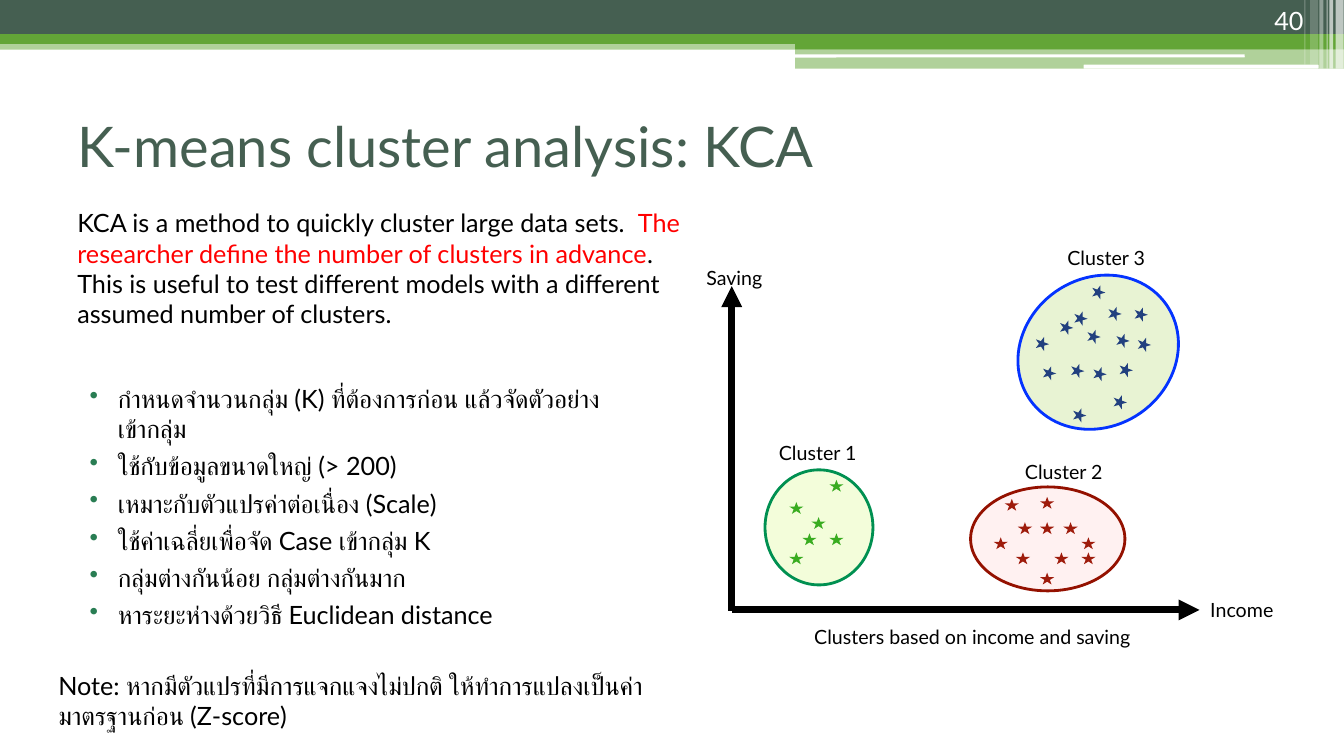
from lxml.etree import SubElement as Sub
from pptx import Presentation
from pptx.dml.color import RGBColor
from pptx.enum.shapes import MSO_CONNECTOR as Link, MSO_SHAPE as Form
from pptx.enum.text import MSO_ANCHOR as Anchor, PP_ALIGN as Align
from pptx.oxml.ns import qn
from pptx.util import Cm, Pt

FONT = "Lato"
WIDE = 33.87
HUES = {
    "black": "000000", "white": "FFFFFF", "red": "FF0000",
    "dark": "455F51", "leaf": "63A537", "bullet": "297D53",
}

# left, top, width, height, colour, opacity in percent
BARS = [
    (0, 1.02, WIDE, 0.23, "leaf", 50),
    (0, 0, WIDE, 0.86, "dark", 100),
    (0, 0.86, WIDE, 0.25, "leaf", 100),
    (20.04, 0.99, 13.83, 0.25, "leaf", 100),
    (20.04, 1.22, 13.83, 0.51, "leaf", 50),
]
GAPS = [(20.02, 1.37, 11.35, 0.08), (27.31, 1.63, 5.92, 0.1)]
# left, width, height, opacity
STRIPES = [
    (33.66, 0.2, 1.73, 65), (33.5, 0.1, 1.73, 65), (33.43, 0.03, 1.73, 60),
    (33.25, 0.1, 1.73, 40), (33.02, 0.2, 1.63, 20), (32.87, 0.03, 1.63, 30),
]

INTRO = [
    ("KCA is a method to quickly cluster large data sets.  ", "black"),
    ("The researcher define the number of clusters in advance", "red"),
    (".  This is useful to test different models with a different "
     "assumed number of clusters.", "black"),
]
POINTS = [
    "กำหนดจำนวนกลุ่ม (K) ที่ต้องการก่อน แล้วจัดตัวอย่างเข้ากลุ่ม",
    "ใช้กับข้อมูลขนาดใหญ่ (> 200)",
    "เหมาะกับตัวแปรค่าต่อเนื่อง (Scale)",
    "ใช้ค่าเฉลี่ยเพื่อจัด Case เข้ากลุ่ม K",
    "กลุ่มต่างกันน้อย กลุ่มต่างกันมาก",
    "หาระยะห่างด้วยวิธี Euclidean distance",
]
NOTE = ("Note: หากมีตัวแปรที่มีการแจกแจงไม่ปกติ "
        "ให้ทำการแปลงเป็นค่ามาตรฐานก่อน (Z-score)")

CLUSTERS = [
    {"oval": (19.28, 11.84, 2.72, 2.9), "fill": "D4FB79", "alpha": 27,
     "line": "009051", "star": "008F00", "tall": 0.3, "turn": 0,
     "spots": [(20.22, 13.44), (19.89, 12.65), (20.9, 12.09),
               (20.45, 13.03), (19.89, 13.92), (20.9, 13.44)]},
    {"oval": (24.46, 12.27, 3.89, 2.62), "fill": "FF7E79", "alpha": 10,
     "line": "941100", "star": "941100", "tall": 0.3, "turn": 0,
     "spots": [(26.57, 13.92), (26.21, 13.16), (25.04, 13.54),
               (26.21, 12.52), (26.21, 14.43), (27.25, 13.92),
               (26.8, 13.16), (25.65, 13.16), (25.32, 12.57),
               (27.25, 13.54), (25.6, 13.92)]},
    {"oval": (25.81, 6.78, 3.73, 4.19), "fill": "99CB38", "alpha": 22,
     "line": "0433FF", "star": "011993", "tall": 0.33, "turn": 235.1,
     "spots": [(27.36, 8.33), (26.95, 9.19), (28.02, 9.98), (26.06, 8.51),
               (28.09, 8.43), (27.03, 7.87), (26.24, 9.25), (27.51, 9.27),
               (27, 10.31), (26.67, 8.1), (28.17, 9.17), (27.89, 7.75),
               (28.55, 7.77), (27.48, 7.21), (28.63, 8.53)]},
]
LABELS = [
    ("Saving", (17.65, 6.5, 2.08, 0.97)),
    ("Cluster 3", (26.75, 6.17, 2.49, 0.66)),
    ("Cluster 2", (25.68, 11.56, 2.49, 0.66)),
    ("Income", (30.35, 15.04, 2.08, 0.66)),
    ("Cluster 1", (19.48, 11.07, 2.72, 0.66)),
    ("Clusters based on income and saving", (20.37, 15.65, 9.12, 0.81)),
]


def tint(name):
    return RGBColor.from_string(HUES.get(name, name))


def add_form(slide, form, box, hue, alpha=100, line=None, turn=0):
    shape = slide.shapes.add_shape(form, *map(Cm, box))
    shape.shadow.inherit = False
    shape.rotation = turn
    shape.fill.solid()
    shape.fill.fore_color.rgb = tint(hue)
    if alpha < 100:
        paint = shape._element.spPr.find(qn("a:solidFill"))[0]
        Sub(paint, qn("a:alpha"), val=str(alpha * 1000))
    if line:
        shape.line.color.rgb = tint(line)
        shape.line.width = Pt(2)
    else:
        shape.line.fill.background()
    return shape


def style(run, size, hue):
    run.font.name = FONT
    run.font.size = Pt(size)
    run.font.color.rgb = tint(hue)


def add_text(slide, box, text, size=18, hue="black", anchor=Anchor.TOP,
             align=Align.LEFT, inset=None):
    frame = slide.shapes.add_textbox(*map(Cm, box)).text_frame
    frame.word_wrap = True
    frame.vertical_anchor = anchor
    if inset is not None:
        frame.margin_left = frame.margin_right = Cm(inset)
        frame.margin_top = frame.margin_bottom = Cm(inset)
    frame.text = text
    for para in frame.paragraphs:
        para.alignment = align
        for run in para.runs:
            style(run, size, hue)
    return frame


def add_points(slide, box, points):
    frame = add_text(slide, box, "\n".join(points))
    for para in frame.paragraphs:
        para.space_before = Pt(5)
        props = para._p.get_or_add_pPr()
        props.set("marL", str(Cm(1.02)))
        props.set("indent", str(-Cm(0.71)))
        paint = Sub(props, qn("a:buClr"))
        Sub(paint, qn("a:srgbClr"), val=HUES["bullet"])
        Sub(props, qn("a:buChar"), char="•")


def add_intro(slide, box, parts):
    para = add_text(slide, box, "").paragraphs[0]
    for text, hue in parts:
        run = para.add_run()
        run.text = text
        style(run, 18, hue)


def add_axis(slide, *ends):
    axis = slide.shapes.add_connector(Link.STRAIGHT, *map(Cm, ends))
    axis.line.color.rgb = tint("black")
    axis.line.width = Pt(5)
    Sub(axis.line._get_or_add_ln(), qn("a:tailEnd"), type="triangle")
    Sub(axis._element.spPr, qn("a:effectLst"))


def add_cluster(slide, group):
    """Draw the stars, then the clear oval over them."""
    turn = group["turn"]
    for left, top in group["spots"]:
        box = (left, top, 0.36, group["tall"])
        add_form(slide, Form.STAR_5_POINT, box, group["star"], turn=turn)
    add_form(slide, Form.OVAL, group["oval"], group["fill"], group["alpha"],
             group["line"], turn)


def add_band(slide):
    for *box, hue, alpha in BARS:
        add_form(slide, Form.RECTANGLE, box, hue, alpha)
    for box in GAPS:
        add_form(slide, Form.ROUNDED_RECTANGLE, box, "white")
    for left, width, height, alpha in STRIPES:
        add_form(slide, Form.RECTANGLE, (left, 0, width, height), "white",
                 alpha)


def main():
    deck = Presentation()
    deck.slide_width, deck.slide_height = Cm(WIDE), Cm(19.05)
    slide = deck.slides.add_slide(deck.slide_layouts[6])

    add_band(slide)
    add_text(slide, (1.7, 2.16, 30.48, 2.97), "K-means cluster analysis: KCA",
             40, "dark", Anchor.MIDDLE)
    add_points(slide, (1.7, 9.53, 13.92, 6.93), POINTS)
    add_text(slide, (30.28, 0, 2.82, 1.02), "40", 18, "white",
             Anchor.BOTTOM, Align.RIGHT)
    add_intro(slide, (1.7, 5.11, 15.98, 4.11), INTRO)

    add_axis(slide, 18.44, 15.37, 30.23, 15.37)
    add_axis(slide, 18.44, 15.39, 18.44, 7.21)
    for group in CLUSTERS:
        add_cluster(slide, group)
    for text, box in LABELS:
        add_text(slide, box, text, 14, anchor=Anchor.MIDDLE, inset=0.15)
    add_text(slide, (1.22, 16.76, 16.94, 1.8), NOTE)

    deck.save("out.pptx")


if __name__ == "__main__":
    main()
